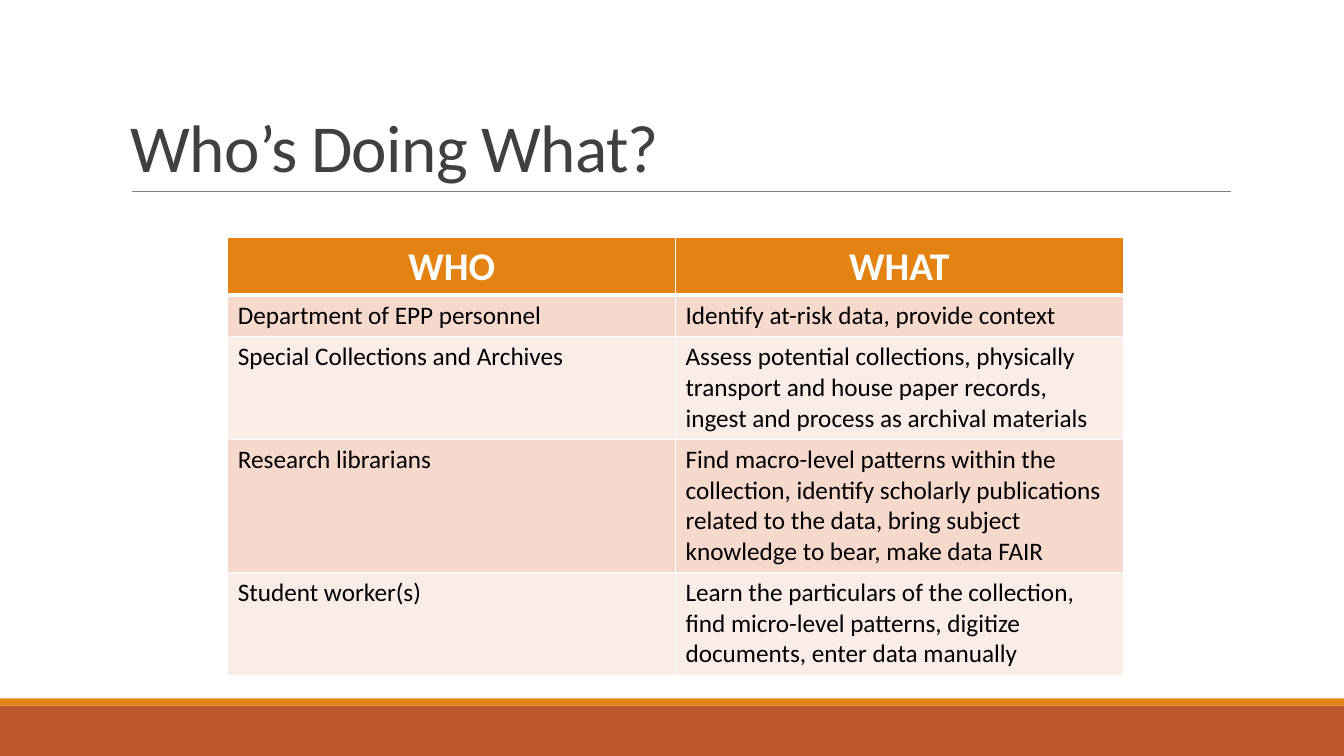
from lxml.etree import SubElement
from pptx import Presentation
from pptx.dml.color import RGBColor
from pptx.enum.shapes import MSO_CONNECTOR, MSO_SHAPE
from pptx.enum.text import MSO_ANCHOR, PP_ALIGN
from pptx.oxml.ns import qn
from pptx.util import Inches, Pt

FONT = "Calibri"
ORANGE, RUST, WHITE = "E48312", "BD582C", "FFFFFF"
BANDS = ["F5D9CC", "FAEDE7"]
HEADINGS = ["WHO", "WHAT"]
ROLES = [
    ("Department of EPP personnel",
     "Identify at-risk data, provide context"),
    ("Special Collections and Archives",
     "Assess potential collections, physically transport and house paper "
     "records, ingest and process as archival materials"),
    ("Research librarians",
     "Find macro-level patterns within the collection, identify scholarly "
     "publications related to the data, bring subject knowledge to bear, "
     "make data FAIR"),
    ("Student worker(s)",
     "Learn the particulars of the collection, find micro-level patterns, "
     "digitize documents, enter data manually"),
]
ROW_HEIGHTS = [0.57, 0.41, 1.02, 1.32, 1.02]


def color(hex_value):
    return RGBColor.from_string(hex_value)


def add_run(paragraph, text, size, hex_value, bold=False):
    run = paragraph.add_run()
    run.text = text
    run.font.name = FONT
    run.font.size = Pt(size)
    run.font.bold = bold
    run.font.color.rgb = color(hex_value)
    return run


def add_bar(slide, top, height, fill):
    shape = slide.shapes.add_shape(
        MSO_SHAPE.RECTANGLE, 0, Inches(top), Inches(13.33), Inches(height))
    shape.shadow.inherit = False
    shape.fill.solid()
    shape.fill.fore_color.rgb = color(fill)
    shape.line.fill.background()


def add_rule(slide, left, right, top):
    connector = slide.shapes.add_connector(
        MSO_CONNECTOR.STRAIGHT,
        Inches(left), Inches(top), Inches(right), Inches(top))
    connector.line.color.rgb = color("808080")
    connector.line.width = Pt(0.5)
    SubElement(connector._element.spPr, qn("a:effectLst"))


def add_title(slide, text):
    box = slide.shapes.add_textbox(
        Inches(1.2), Inches(0.31), Inches(11), Inches(1.59))
    frame = box.text_frame
    frame.word_wrap = True
    frame.vertical_anchor = MSO_ANCHOR.BOTTOM
    paragraph = frame.paragraphs[0]
    paragraph.line_spacing = 0.85
    run = add_run(paragraph, text, 48, "404040")
    run.font._element.set("spc", "-50")


def add_borders(cell, widths):
    properties = cell._tc.get_or_add_tcPr()
    for side, width in widths.items():
        line = SubElement(properties, qn(f"a:ln{side}"), w=str(Pt(width)))
        fill = SubElement(line, qn("a:solidFill"))
        SubElement(fill, qn("a:srgbClr"), val=WHITE)


def fill_cell(cell, text, is_header, fill):
    # The rule under the header row is thicker than the other borders
    add_borders(cell, {"L": 1, "R": 1, "T": 1, "B": 3 if is_header else 1})
    cell.fill.solid()
    cell.fill.fore_color.rgb = color(fill)
    paragraph = cell.text_frame.paragraphs[0]
    if is_header:
        paragraph.alignment = PP_ALIGN.CENTER
        add_run(paragraph, text, 28, WHITE, bold=True)
    else:
        add_run(paragraph, text, 18, "000000")


def add_role_table(slide):
    rows = [HEADINGS, *ROLES]
    table = slide.shapes.add_table(
        len(rows), len(HEADINGS), Inches(2.26), Inches(2.36),
        Inches(8.88), Inches(sum(ROW_HEIGHTS))).table
    for row_index, texts in enumerate(rows):
        table.rows[row_index].height = Inches(ROW_HEIGHTS[row_index])
        is_header = row_index == 0
        fill = ORANGE if is_header else BANDS[(row_index - 1) % 2]
        for column_index, text in enumerate(texts):
            fill_cell(table.cell(row_index, column_index), text, is_header, fill)


def main():
    presentation = Presentation()
    presentation.slide_width = Inches(13.33)
    presentation.slide_height = Inches(7.5)
    slide = presentation.slides.add_slide(presentation.slide_layouts[6])

    # Footer bands and title rule
    add_bar(slide, 7, 0.5, RUST)
    add_bar(slide, 6.93, 0.07, ORANGE)
    add_rule(slide, 1.31, 12.21, 1.9)

    # Content
    add_title(slide, "Who’s Doing What?")
    add_role_table(slide)

    presentation.save("out.pptx")


if __name__ == "__main__":
    main()
